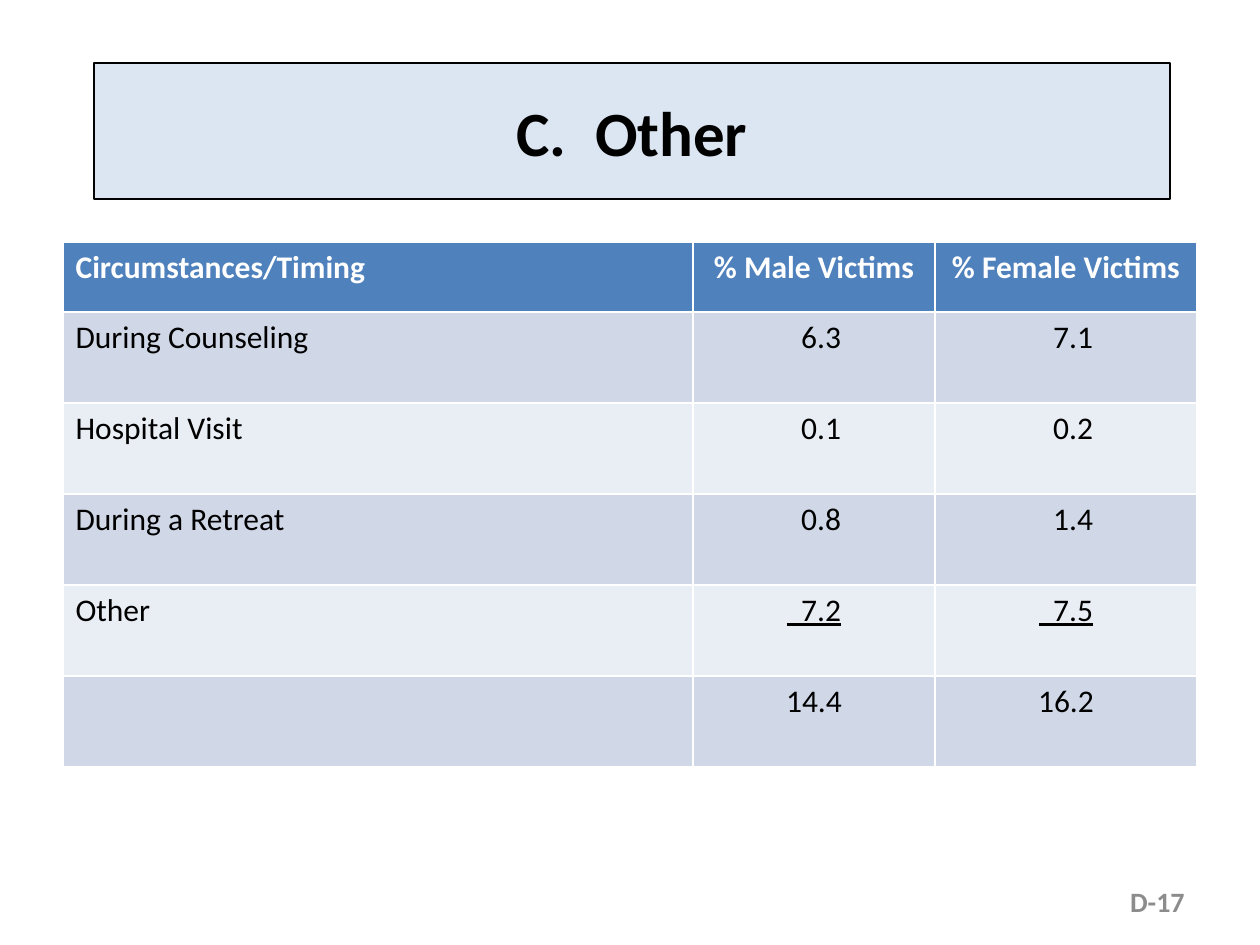
from pptx import Presentation
from pptx.dml.color import RGBColor
from pptx.enum.shapes import MSO_SHAPE
from pptx.enum.text import MSO_ANCHOR, PP_ALIGN
from pptx.util import Emu, Pt

RECT = MSO_SHAPE.RECTANGLE
MIDDLE = MSO_ANCHOR.MIDDLE
LEFT, CENTER, RIGHT = PP_ALIGN.LEFT, PP_ALIGN.CENTER, PP_ALIGN.RIGHT
SCALE = 914400 / 126


def px(*sizes):
    return [Emu(round(n * SCALE)) for n in sizes]


def write(frame, text, size, color, align, bold=False, line=False):
    par = frame.paragraphs[0]
    par.alignment = align
    run = par.add_run()
    run.text = text
    font = run.font
    font.name, font.size = "Calibri", Pt(size)
    font.bold, font.underline = bold, line
    font.color.rgb = RGBColor.from_string(color)


deck = Presentation()
deck.slide_width, deck.slide_height = px(1260, 945)
slide = deck.slides.add_slide(deck.slide_layouts[6])

# Title box
title = slide.shapes.add_shape(RECT, *px(94, 63, 1076, 136))
title.shadow.inherit = False
title.fill.solid()
title.fill.fore_color.rgb = RGBColor.from_string("DCE6F2")
title.line.color.rgb = RGBColor.from_string("000000")
title.line.width = Pt(1.5)
title.text_frame.vertical_anchor = MIDDLE
write(title.text_frame, "C.  Other", 36, "000000", CENTER, bold=True)

# Table: the default style supplies the white rules
rows = [
    ("Circumstances/Timing", "% Male Victims", "% Female Victims"),
    ("During Counseling", "  6.3", "  7.1"),
    ("Hospital Visit", "  0.1", "  0.2"),
    ("During a Retreat", "  0.8", "  1.4"),
    ("Other", "  7.2", "  7.5"),
    ("", "14.4", "16.2"),
]
table = slide.shapes.add_table(6, 3, *px(63, 242, 1134, 525)).table
for col, width in zip(table.columns, px(630, 242, 262)):
    col.width = width
for r, row in enumerate(rows):
    head = r == 0
    table.rows[r].height = px(70 if head else 91)[0]
    fill = "4F81BD" if head else ("E9EDF4", "D0D8E8")[r % 2]
    for c, text in enumerate(row):
        cell = table.cell(r, c)
        cell.fill.solid()
        cell.fill.fore_color.rgb = RGBColor.from_string(fill)
        if text:
            # The last figures above the totals are underlined
            write(cell.text_frame, text, 18, "FFFFFF" if head else "000000",
                  CENTER if c else LEFT, bold=head, line=r == 4 and c > 0)

# Page number
page = slide.shapes.add_textbox(*px(903, 876, 294, 50)).text_frame
page.word_wrap = True
page.vertical_anchor = MIDDLE
write(page, "D-17", 16, "8C8C8C", RIGHT, bold=True)

deck.save("out.pptx")
